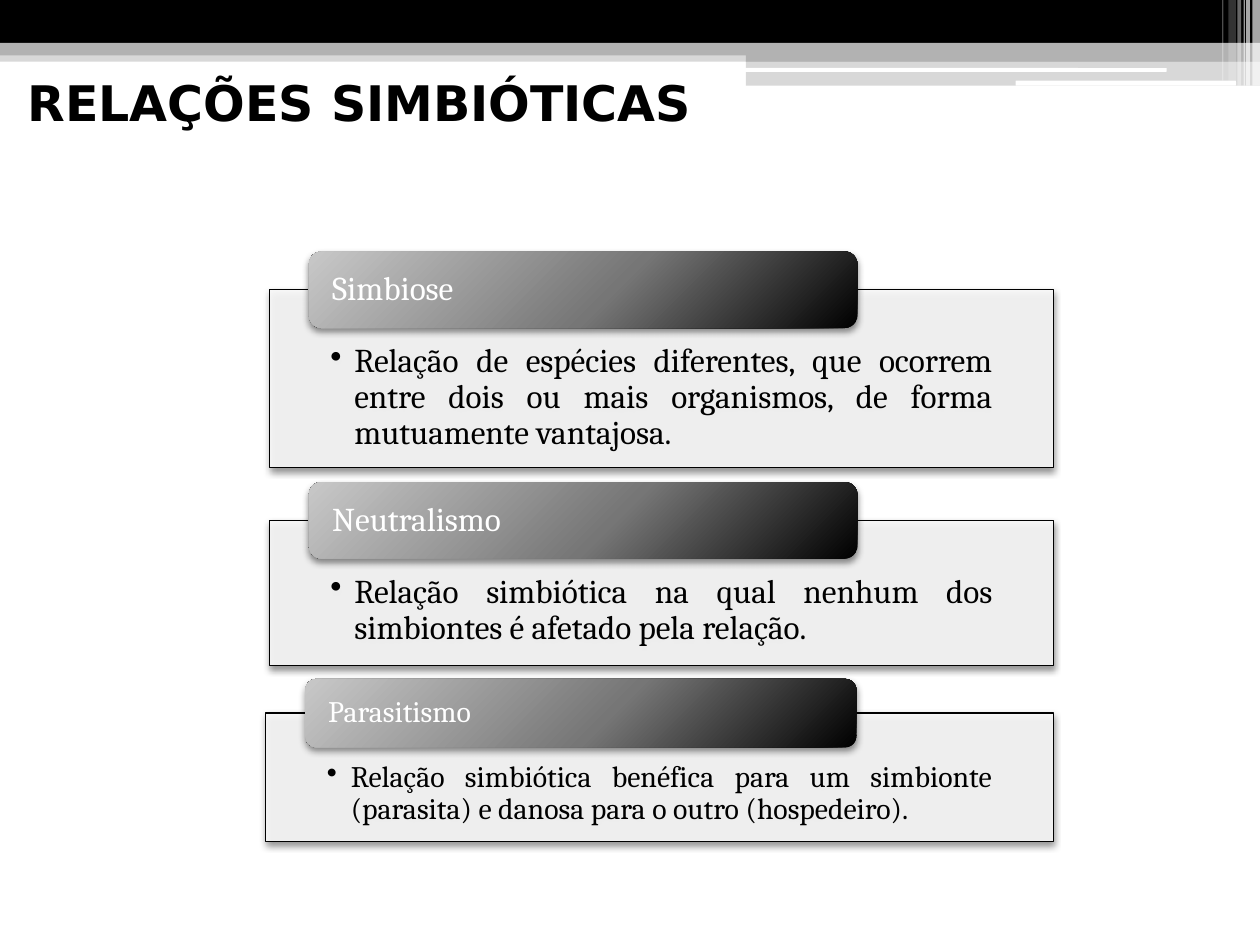
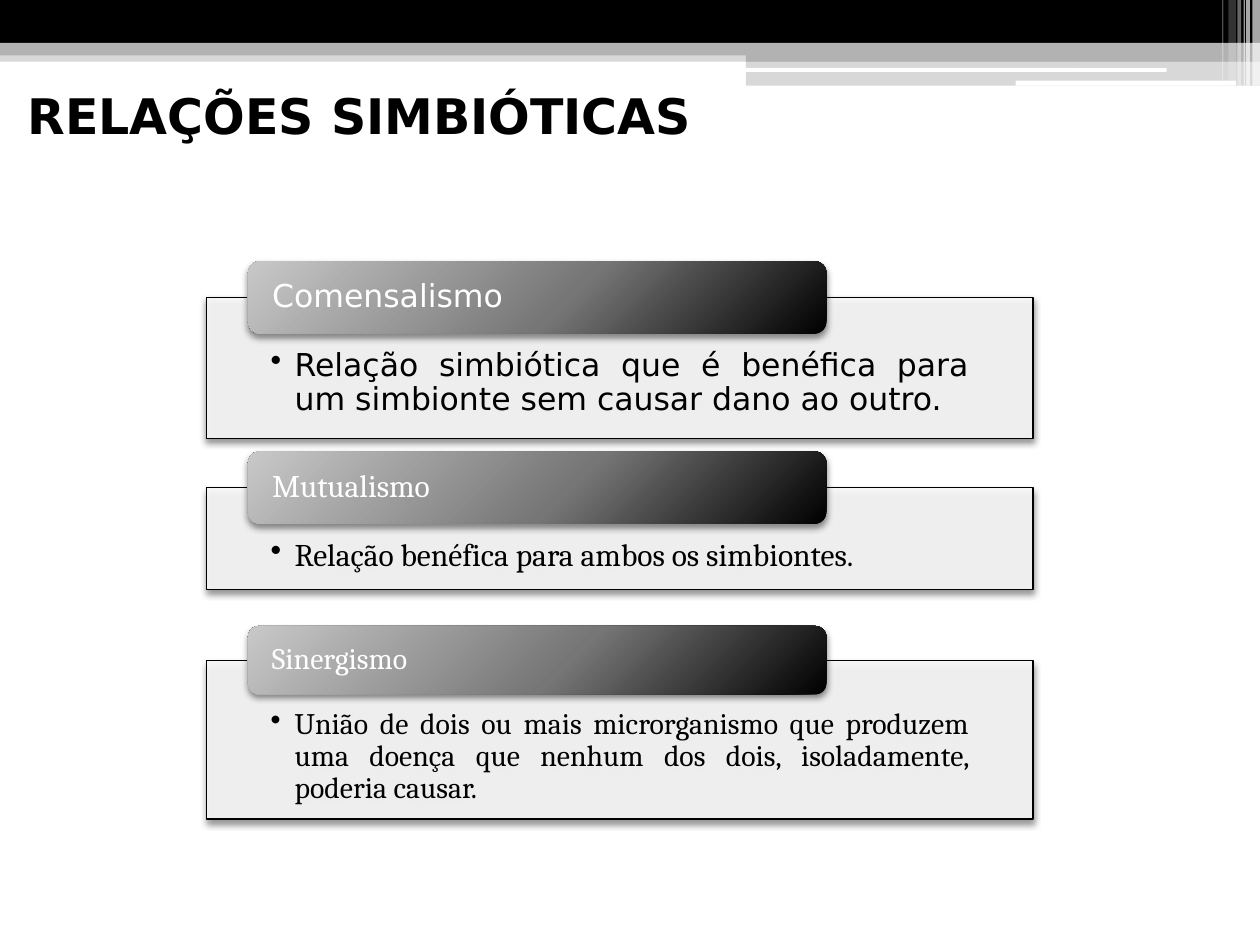
from dataclasses import dataclass
from typing import Any

from pptx import Presentation
from pptx.dml.color import RGBColor
from pptx.enum.shapes import MSO_SHAPE
from pptx.enum.text import MSO_ANCHOR, MSO_AUTO_SIZE, PP_ALIGN
from pptx.oxml import parse_xml
from pptx.oxml.ns import nsdecls, qn
from pptx.util import Inches, Pt

# Grid: 100 columns by 75 rows on a 10 by 7.5 inch slide
SLIDE_WIDTH, SLIDE_HEIGHT = Inches(10), Inches(7.5)
COLUMN, ROW = SLIDE_WIDTH / 100, SLIDE_HEIGHT / 75

BLACK, WHITE, GREY, PALE = "000000", "FFFFFF", "B2B2B2", "F8F8F8"
SERIF, SANS = "Cambria", "DejaVu Sans"
TITLE = "RELAÇÕES SIMBIÓTICAS"
TITLE_FONT = {"name": SANS, "size": Pt(28), "bold": True}
TAB_GRADIENT = ((0, "C8C8C8"), (55, "767676"), (100, BLACK))

# Proportions of a card and its tab
TAB_OFFSET, TAB_WIDTH = 0.05, 0.7
TAB_ROWS_PER_POINT = 0.32
HANGING_INDENT = Inches(0.19)


@dataclass(frozen=True)
class Band:
    left: float
    top: float
    width: float
    height: float
    color: str
    opacity: int = 100
    rounded: bool = False


@dataclass(frozen=True)
class Card:
    name: str
    description: str
    left: float
    top: float
    width: float
    height: float
    size: int
    font: str = SERIF


@dataclass(frozen=True)
class Page:
    title_top: float
    cards: tuple[Card, ...]


BANDS = (
    Band(0, 4, 100, 0.9, GREY, 50),
    Band(0, 0, 100, 3.4, BLACK),
    Band(0, 3.4, 100, 1, GREY),
    Band(59.2, 3.9, 40.8, 1, GREY),
    Band(59.2, 4.8, 40.8, 2, GREY, 50),
    Band(59.1, 5.4, 33.5, 0.3, WHITE, rounded=True),
    Band(80.6, 6.4, 17.5, 0.4, WHITE, rounded=True),
    # Thin vertical stripes in the corner
    Band(99.4, 0, 0.6, 6.8, WHITE, 65),
    Band(98.9, 0, 0.3, 6.8, WHITE, 65),
    Band(98.7, 0, 0.1, 6.8, WHITE, 60),
    Band(98.2, 0, 0.3, 6.8, WHITE, 40),
    Band(97.5, 0, 0.6, 6.4, WHITE, 20),
    Band(97, 0, 0.1, 6.4, WHITE, 30),
)

PAGES = (
    Page(6.8, (
        Card("Simbiose",
             "Relação de espécies diferentes, que ocorrem entre dois ou mais "
             "organismos, de forma mutuamente vantajosa.",
             21.4, 23, 62.2, 14.1, 19),
        Card("Neutralismo",
             "Relação simbiótica na qual nenhum dos simbiontes é afetado pela relação.",
             21.4, 41.3, 62.2, 11.5, 19),
        Card("Parasitismo",
             "Relação simbiótica benéfica para um simbionte (parasita) e danosa "
             "para o outro (hospedeiro).",
             21.1, 56.6, 62.5, 10.2, 17),
    )),
    Page(7.8, (
        Card("Comensalismo",
             "Relação simbiótica que é benéfica para um simbionte sem causar dano ao outro.",
             16.4, 23.6, 65.6, 11.2, 18, SANS),
        Card("Mutualismo", "Relação benéfica para ambos os simbiontes.",
             16.4, 38.7, 65.6, 8.1, 18),
        Card("Sinergismo",
             "União de dois ou mais microrganismo que produzem uma doença que "
             "nenhum dos dois, isoladamente, poderia causar.",
             16.4, 52.4, 65.6, 12.6, 17),
    )),
)


def rgb(color: str) -> RGBColor:
    return RGBColor.from_string(color)


def apply_format(target: Any, values: dict[str, Any]) -> None:
    for attribute, value in values.items():
        setattr(target, attribute, value)


def grid_box(left: float, top: float, width: float, height: float) -> tuple[int, ...]:
    return (round(left * COLUMN), round(top * ROW),
            round(width * COLUMN), round(height * ROW))


def add_box(slide: Any, kind: Any, box: tuple[int, ...], color: str,
            opacity: int = 100) -> Any:
    """Add a plain filled shape without outline or shadow."""
    shape = slide.shapes.add_shape(kind, *box)
    shape.shadow.inherit = False
    shape.line.fill.background()
    shape.fill.solid()
    shape.fill.fore_color.rgb = rgb(color)
    if opacity < 100:
        color_element = next(shape.element.spPr.iter(qn("a:srgbClr")))
        color_element.append(parse_xml(
            f'<a:alpha {nsdecls("a")} val="{opacity * 1000}"/>'))
    return shape


def add_soft_shadow(shape: Any) -> None:
    shape.element.spPr.find(qn("a:effectLst")).append(parse_xml(
        f'<a:outerShdw {nsdecls("a")} blurRad="{Pt(4)}" dist="{Pt(2)}" '
        f'dir="5400000" rotWithShape="0"><a:srgbClr val="{BLACK}">'
        '<a:alpha val="45000"/></a:srgbClr></a:outerShdw>'))


def set_tab_gradient(shape: Any) -> None:
    stops = "".join(
        f'<a:gs pos="{position * 1000}"><a:srgbClr val="{color}"/></a:gs>'
        for position, color in TAB_GRADIENT)
    properties = shape.element.spPr
    properties.replace(properties.find(qn("a:solidFill")), parse_xml(
        f'<a:gradFill {nsdecls("a")} rotWithShape="1"><a:gsLst>{stops}</a:gsLst>'
        '<a:path path="circle"><a:fillToRect l="-40000" t="-90000" '
        'r="140000" b="190000"/></a:path></a:gradFill>'))


def write_text(shape: Any, text: str, font: dict[str, Any], color: str,
               frame_format: dict[str, Any], paragraph_format: dict[str, Any]) -> Any:
    frame = shape.text_frame
    apply_format(frame, {"word_wrap": True, "auto_size": MSO_AUTO_SIZE.NONE,
                         **frame_format})
    paragraph = frame.paragraphs[0]
    apply_format(paragraph, paragraph_format)
    run = paragraph.add_run()
    run.text = text
    apply_format(run.font, font)
    run.font.color.rgb = rgb(color)
    return paragraph


def add_bullet(paragraph: Any) -> None:
    properties = paragraph._p.get_or_add_pPr()
    properties.set("marL", str(HANGING_INDENT))
    properties.set("indent", str(-HANGING_INDENT))
    properties.append(parse_xml(f'<a:buChar {nsdecls("a")} char="•"/>'))


def draw_bands(slide: Any, layout: Any) -> None:
    """Draw the header bands and move them to the shared layout."""
    tree = layout.element.cSld.spTree
    for index, band in enumerate(BANDS):
        kind = MSO_SHAPE.ROUNDED_RECTANGLE if band.rounded else MSO_SHAPE.RECTANGLE
        box = grid_box(band.left, band.top, band.width, band.height)
        shape = add_box(slide, kind, box, band.color, band.opacity)
        shape.element.nvSpPr.cNvPr.id = 20 + index
        tree.insert(2 + index, shape.element)


def draw_title(slide: Any, top: float) -> None:
    title = slide.shapes.title
    left, top_edge, width, height = grid_box(1.2, top, 59.1, 7.1)
    apply_format(title, {"left": left, "top": top_edge,
                         "width": width, "height": height})
    # The bottom margin lifts the single line to the upper part of the box
    write_text(title, TITLE, TITLE_FONT, BLACK,
               {"vertical_anchor": MSO_ANCHOR.MIDDLE, "margin_top": 0,
                "margin_bottom": round(4.5 * ROW)},
               {"alignment": PP_ALIGN.LEFT})


def draw_card(slide: Any, card: Card) -> None:
    font = {"name": card.font, "size": Pt(card.size)}
    tab_height = card.size * TAB_ROWS_PER_POINT
    offset = card.width * TAB_OFFSET
    side_margin = round(1.55 * offset * COLUMN)

    # Description panel
    panel = add_box(slide, MSO_SHAPE.RECTANGLE,
                    grid_box(card.left, card.top, card.width, card.height), PALE, 90)
    panel.line.color.rgb = rgb(BLACK)
    panel.line.width = Pt(0.75)
    add_soft_shadow(panel)
    paragraph = write_text(
        panel, card.description, font, BLACK,
        {"vertical_anchor": MSO_ANCHOR.TOP,
         "margin_left": side_margin, "margin_right": side_margin,
         "margin_top": round(0.71 * tab_height * ROW),
         "margin_bottom": round(0.25 * tab_height * ROW)},
        {"alignment": PP_ALIGN.JUSTIFY, "level": 1, "line_spacing": 0.9})
    add_bullet(paragraph)

    # Name tab, centred on the top edge of the panel
    tab = add_box(slide, MSO_SHAPE.ROUNDED_RECTANGLE,
                  grid_box(card.left + offset, card.top - tab_height / 2,
                           card.width * TAB_WIDTH, tab_height), GREY)
    set_tab_gradient(tab)
    add_soft_shadow(tab)
    tab_margin = round(offset / 2 * COLUMN)
    write_text(tab, card.name, font, WHITE,
               {"vertical_anchor": MSO_ANCHOR.MIDDLE,
                "margin_left": tab_margin, "margin_right": tab_margin,
                "margin_top": 0, "margin_bottom": 0},
               {"alignment": PP_ALIGN.LEFT, "line_spacing": 0.9})


def main() -> None:
    presentation = Presentation()
    apply_format(presentation, {"slide_width": SLIDE_WIDTH,
                                "slide_height": SLIDE_HEIGHT})
    layout = presentation.slide_layouts.get_by_name("Title Only")
    for number, page in enumerate(PAGES):
        slide = presentation.slides.add_slide(layout)
        if number == 0:
            draw_bands(slide, layout)
        draw_title(slide, page.title_top)
        for card in page.cards:
            draw_card(slide, card)
    presentation.save("out.pptx")


if __name__ == "__main__":
    main()
